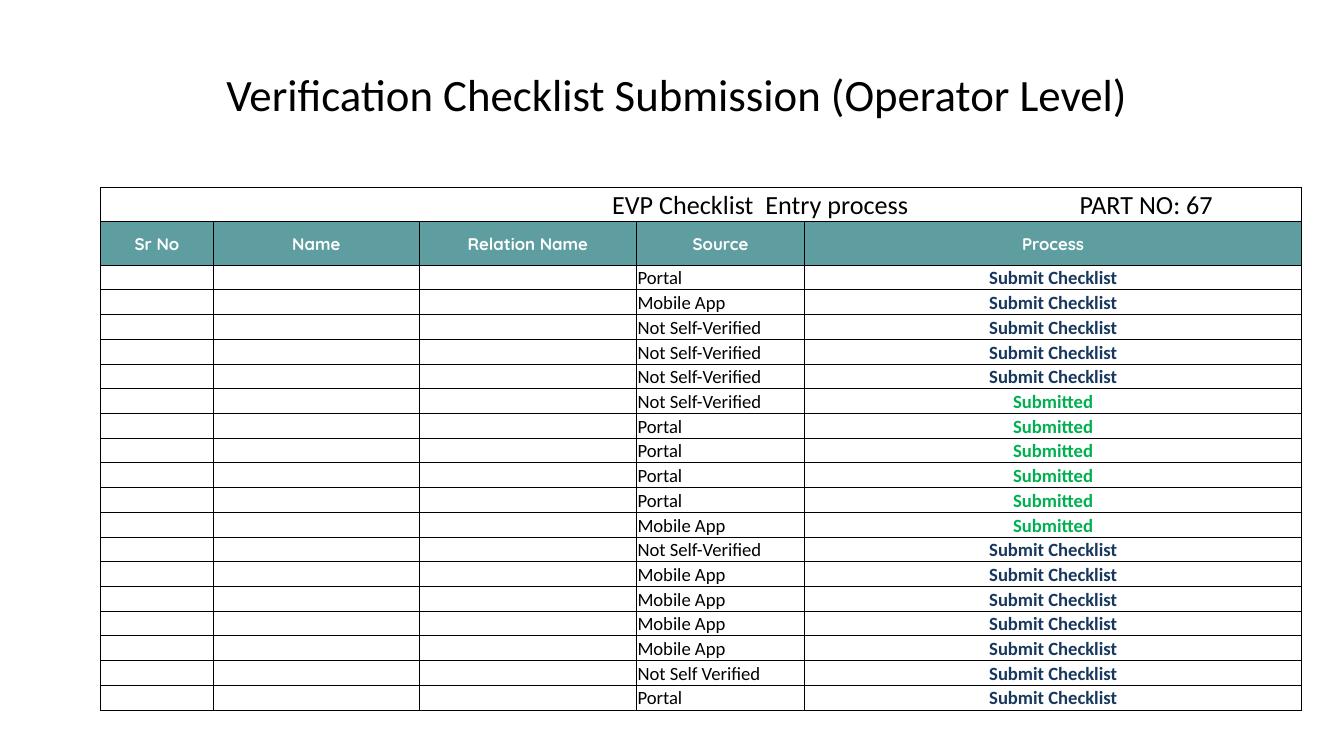
from lxml.etree import SubElement
from pptx import Presentation
from pptx.dml.color import RGBColor
from pptx.enum.text import MSO_ANCHOR, PP_ALIGN
from pptx.oxml.ns import qn
from pptx.util import Pt

BLACK, WHITE, TEAL, NAVY, GREEN = "000000", "FFFFFF", "5F9EA0", "17375E", "00B050"
COLUMN_WIDTHS = [60.5, 110.2, 116.5, 90, 266.4]
TITLE_HEIGHT, HEADER_HEIGHT, ROW_HEIGHT = 18, 23.6, 13.25
HEADERS = ["Sr No", "Name", "Relation Name", "Source", "Process"]
OPEN, DONE = "Submit Checklist", "Submitted"
STATUS_COLORS = {OPEN: NAVY, DONE: GREEN}
ENTRIES = [
    ("Portal", OPEN),
    ("Mobile App", OPEN),
    *[("Not Self-Verified", OPEN)] * 3,
    ("Not Self-Verified", DONE),
    *[("Portal", DONE)] * 4,
    ("Mobile App", DONE),
    ("Not Self-Verified", OPEN),
    *[("Mobile App", OPEN)] * 4,
    ("Not Self Verified", OPEN),
    ("Portal", OPEN),
]


def rgb(value):
    return RGBColor.from_string(value)


def style_text(p, text, size, color, font="Calibri", bold=False, align=PP_ALIGN.LEFT):
    p.text = text
    p.alignment = align
    p.font.size = Pt(size)
    p.font.name = font
    p.font.bold = bold
    p.font.color.rgb = rgb(color)
    if not text:
        SubElement(p._p, qn("a:endParaRPr"), sz=str(size * 100))


def add_borders(cell):
    tcPr = cell._tc.get_or_add_tcPr()
    for i, side in enumerate(("lnL", "lnR", "lnT", "lnB")):
        ln = tcPr.makeelement(qn(f"a:{side}"), {"w": str(Pt(0.5))})
        fill = SubElement(ln, qn("a:solidFill"))
        SubElement(fill, qn("a:srgbClr"), val=BLACK)
        tcPr.insert(i, ln)


def fill_cell(cell, text, size=10, color=BLACK, fill=WHITE, anchor=MSO_ANCHOR.BOTTOM, **style):
    cell.margin_left = cell.margin_right = cell.margin_top = Pt(0.6)
    cell.margin_bottom = Pt(0)
    cell.vertical_anchor = anchor
    cell.fill.solid()
    cell.fill.fore_color.rgb = rgb(fill)
    add_borders(cell)
    style_text(cell.text_frame.paragraphs[0], text, size, color, **style)


def add_tab_stops(p, positions):
    tabs = p._p.get_or_add_pPr().makeelement(qn("a:tabLst"), {})
    for position in positions:
        SubElement(tabs, qn("a:tab"), pos=str(Pt(position)), algn="l")
    p._p.pPr.insert(0, tabs)


def add_title(s, left, top, width, height):
    tf = s.shapes.add_textbox(Pt(left), Pt(top), Pt(width), Pt(height)).text_frame
    tf.word_wrap = True
    tf.vertical_anchor = MSO_ANCHOR.MIDDLE
    style_text(tf.paragraphs[0], "Verification Checklist Submission (Operator Level)",
               24, BLACK, align=PP_ALIGN.CENTER)


def add_checklist(s, left, top, width, height):
    heights = [TITLE_HEIGHT, HEADER_HEIGHT] + [ROW_HEIGHT] * len(ENTRIES)
    table = s.shapes.add_table(len(heights), len(HEADERS),
                               Pt(left), Pt(top), Pt(width), Pt(height)).table
    for column, column_width in zip(table.columns, COLUMN_WIDTHS):
        column.width = Pt(column_width)
    for row, row_height in zip(table.rows, heights):
        row.height = Pt(row_height)

    for c in range(len(HEADERS)):
        fill_cell(table.cell(0, c), "", size=14)
    heading = table.cell(0, 0)
    heading.merge(table.cell(0, len(HEADERS) - 1))
    p = heading.text_frame.paragraphs[0]
    style_text(p, "\tEVP Checklist  Entry process\tPART NO: 67", 14, BLACK)
    add_tab_stops(p, [273.5, 524])

    for c, header in enumerate(HEADERS):
        fill_cell(table.cell(1, c), header, 9, WHITE, TEAL, MSO_ANCHOR.MIDDLE,
                  font="Quicksand", bold=True, align=PP_ALIGN.CENTER)

    for r, (source, status) in enumerate(ENTRIES, start=2):
        for c in range(3):
            fill_cell(table.cell(r, c), "")
        fill_cell(table.cell(r, 3), source)
        fill_cell(table.cell(r, 4), status, color=STATUS_COLORS[status],
                  bold=True, align=PP_ALIGN.CENTER)


def main():
    prs = Presentation()
    prs.slide_width, prs.slide_height = Pt(720), Pt(405)
    s = prs.slides.add_slide(prs.slide_layouts[6])
    add_title(s, 38.5, 16.5, 648, 67.5)
    add_checklist(s, 53.8, 100.5, sum(COLUMN_WIDTHS), 280.1)
    prs.save("out.pptx")


if __name__ == "__main__":
    main()
